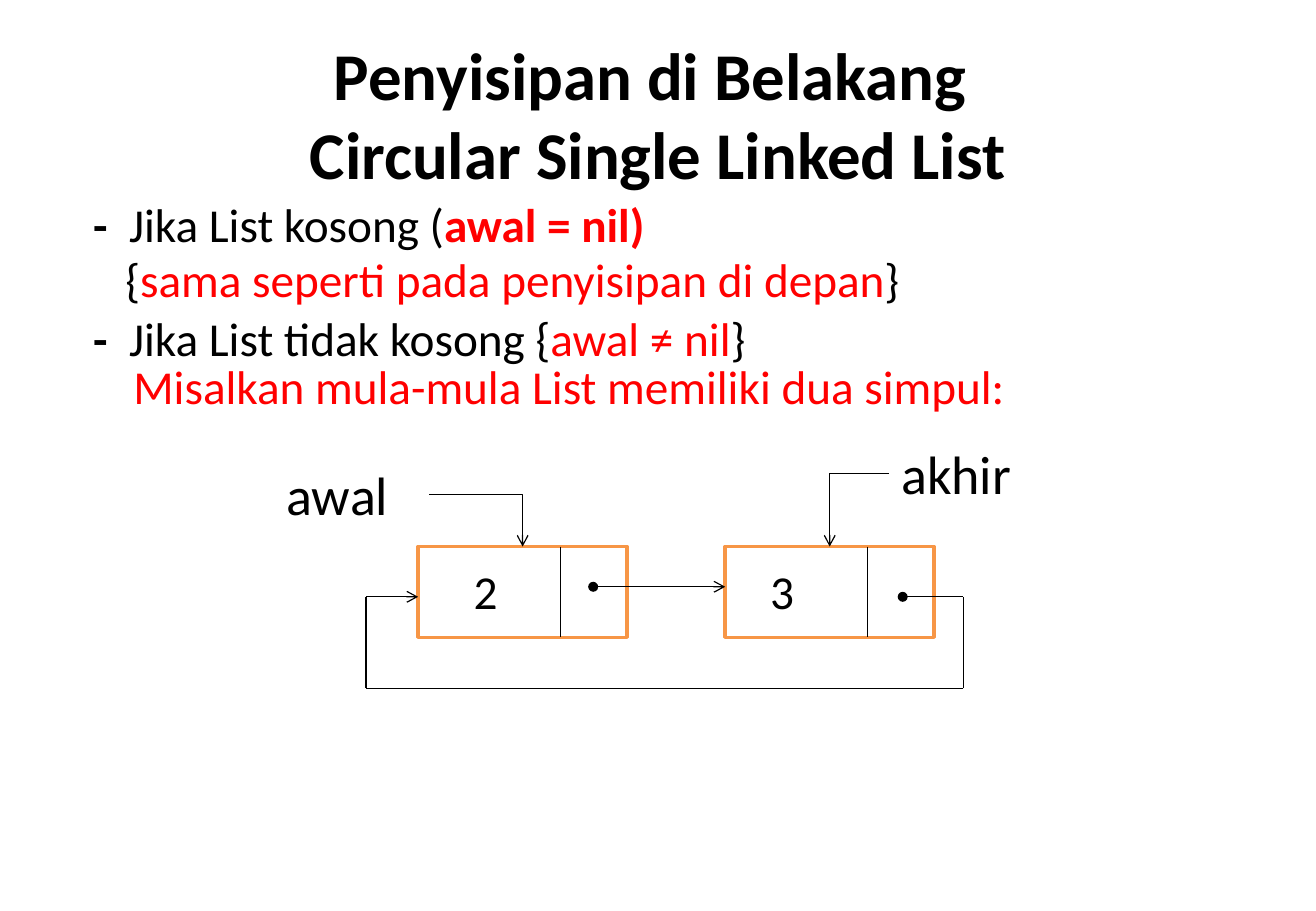
from dataclasses import dataclass

from lxml import etree
from pptx import Presentation
from pptx.dml.color import RGBColor
from pptx.enum.shapes import MSO_CONNECTOR, MSO_SHAPE
from pptx.enum.text import MSO_ANCHOR, PP_ALIGN
from pptx.oxml.ns import qn
from pptx.util import Cm, Pt

STRAIGHT, ELBOW = MSO_CONNECTOR.STRAIGHT, MSO_CONNECTOR.ELBOW
RECTANGLE = MSO_SHAPE.RECTANGLE
TOP, MIDDLE = MSO_ANCHOR.TOP, MSO_ANCHOR.MIDDLE
LEFT, CENTER = PP_ALIGN.LEFT, PP_ALIGN.CENTER


@dataclass(frozen=True)
class Theme:
    font: str = "Calibri"
    ink: RGBColor = RGBColor(0x00, 0x00, 0x00)
    accent: RGBColor = RGBColor(0xFF, 0x00, 0x00)
    node_fill: RGBColor = RGBColor(0xFF, 0xFF, 0xFF)
    node_line: RGBColor = RGBColor(0xF7, 0x96, 0x46)
    title_size: float = 39.6
    body_size: float = 28
    pointer_size: float = 32
    node_width: float = 2
    arrow_width: float = 0.75


THEME = Theme()
PLAIN = {"bold": False, "color": THEME.ink}
BOLD = {"bold": True, "color": THEME.ink}
RED = {"bold": False, "color": THEME.accent}
RED_BOLD = {"bold": True, "color": THEME.accent}

prs = Presentation()
prs.slide_width, prs.slide_height = Cm(27.51), Cm(19.05)
slide = prs.slides.add_slide(prs.slide_layouts[6])
shapes = slide.shapes


def add_text(box, paragraphs, size, anchor=TOP, align=LEFT, spacing=1.0):
    """Each paragraph is (left margin cm, first-line indent cm, [(text, format), ...])."""
    frame = shapes.add_textbox(*map(Cm, box)).text_frame
    frame.word_wrap, frame.vertical_anchor = True, anchor
    for index, (margin, indent, runs) in enumerate(paragraphs):
        paragraph = frame.add_paragraph() if index else frame.paragraphs[0]
        paragraph.alignment, paragraph.line_spacing = align, spacing
        properties = paragraph._p.get_or_add_pPr()
        properties.set("marL", str(Cm(margin)))
        properties.set("indent", str(Cm(indent)))
        for text, style in runs:
            for part_index, part in enumerate(text.split("\n")):
                if part_index:
                    paragraph.add_line_break()
                run = paragraph.add_run()
                run.text = part
                values = {"name": THEME.font, "size": Pt(size), "bold": style["bold"]}
                for name, value in values.items():
                    setattr(run.font, name, value)
                run.font.color.rgb = style["color"]


def add_line(start, end, head=None, tail=None, kind=STRAIGHT):
    line = shapes.add_connector(kind, *map(Cm, (*start, *end)))
    line.line.color.rgb = THEME.ink
    line.line.width = Pt(THEME.arrow_width)
    properties = line._element.spPr
    if kind == ELBOW:  # a single bend: across, then down
        properties.find(qn("a:prstGeom")).set("prst", "bentConnector2")
    for tag, arrowhead in (("a:headEnd", head), ("a:tailEnd", tail)):
        if arrowhead:
            etree.SubElement(line.line._get_or_add_ln(), qn(tag), type=arrowhead)
    etree.SubElement(properties, qn("a:effectLst"))


# Title and explanation
add_text((1.37, 0.85, 24.77, 3.18),
         [(0, 0, [("Penyisipan di Belakang \nCircular Single Linked List", BOLD)])],
         THEME.title_size, MIDDLE, CENTER, 0.98)

DASH = 0.75
explanation = [
    ((1.7, 4.03, 24.54, 3.38), 0.97, [
        (DASH, -DASH, [("-\t", BOLD), ("Jika List kosong (", PLAIN),
                       ("awal = nil)", RED_BOLD)]),
        (0.67, 0, [("{", PLAIN), ("sama seperti pada penyisipan di depan", RED),
                   ("}", PLAIN)])]),
    ((1.7, 6.35, 24.54, 1.9), 1.0, [
        (DASH, -DASH, [("-\t", BOLD), ("Jika List tidak kosong {", PLAIN),
                       ("awal ≠ nil", RED), ("}", PLAIN)])]),
    ((2.54, 7.34, 22.02, 1.9), 1.0, [
        (0, 0, [("Misalkan mula-mula List memiliki dua simpul:", RED)])]),
]
for box, spacing, paragraphs in explanation:
    add_text(box, paragraphs, THEME.body_size, spacing=spacing)

# Nodes of the list: value cell, divider, pointer cell
NODE_TOP, NODE_WIDTH, NODE_HEIGHT, VALUE_WIDTH = 11.43, 4.37, 1.9, 2.98
FIRST_LEFT, SECOND_LEFT = 8.74, 15.16
for value, left, value_left in (("2", FIRST_LEFT, 9.65), ("3", SECOND_LEFT, 15.85)):
    node = shapes.add_shape(RECTANGLE, *map(Cm, (left, NODE_TOP, NODE_WIDTH, NODE_HEIGHT)))
    node.shadow.inherit = False
    node.fill.solid()
    node.fill.fore_color.rgb = THEME.node_fill
    node.line.color.rgb = THEME.node_line
    node.line.width = Pt(THEME.node_width)
    divider = left + VALUE_WIDTH
    add_line((divider, NODE_TOP), (divider, NODE_TOP + NODE_HEIGHT))
    add_text((value_left, 11.63, 1.6, 1.45), [(0, 0, [(value, PLAIN)])], THEME.body_size)

# Pointers to the first and last node
for pointer, label_left, label_top, start, node_left in (
    ("awal", 5.74, 9.53, (8.97, 10.34), FIRST_LEFT),
    ("akhir", 18.59, 9.09, (18.59, 9.91), SECOND_LEFT),
):
    add_text((label_left, label_top, 3.2, 1.63), [(0, 0, [(pointer, PLAIN)])],
             THEME.pointer_size)
    add_line(start, (node_left + NODE_WIDTH / 2, NODE_TOP), tail="arrow", kind=ELBOW)

# Link to the next node, and the way back that closes the circle
add_line((12.4, 12.27), (SECOND_LEFT, 12.27), "oval", "arrow")

LOOP_LEFT, LOOP_RIGHT, LOOP_TOP, LOOP_BOTTOM = 7.65, 20.14, 12.48, 14.39
way_back = [(18.87, LOOP_TOP), (LOOP_RIGHT, LOOP_TOP), (LOOP_RIGHT, LOOP_BOTTOM),
            (LOOP_LEFT, LOOP_BOTTOM), (LOOP_LEFT, LOOP_TOP), (FIRST_LEFT, LOOP_TOP)]
heads = ["oval", None, None, None, None]
for start, end, head, tail in zip(way_back, way_back[1:], heads, [None] * 4 + ["arrow"]):
    add_line(start, end, head, tail)

prs.save("out.pptx")
